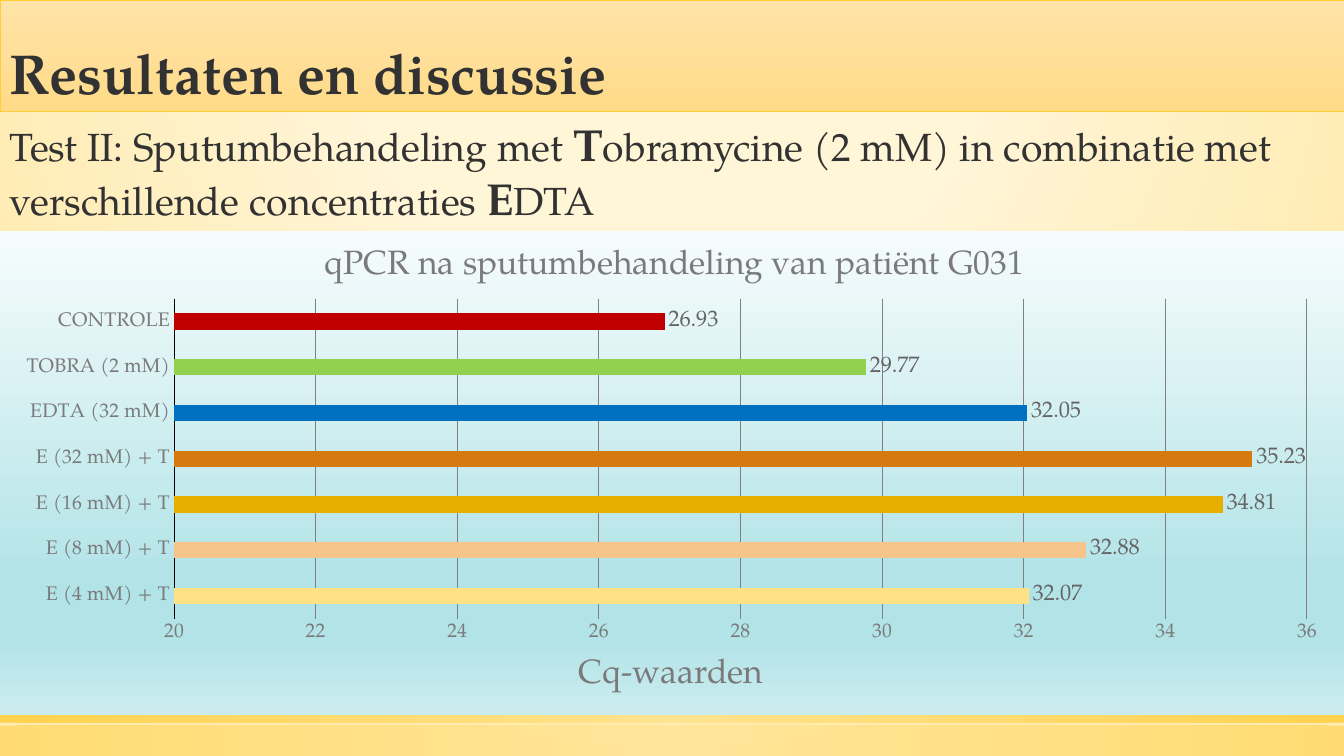
import dataclasses
import typing

import lxml.etree
import pptx
import pptx.chart.data
import pptx.dml.color
import pptx.enum.chart
import pptx.enum.shapes
import pptx.enum.text
import pptx.oxml
import pptx.oxml.ns
import pptx.util

FONT = "TeX Gyre Pagella"
WIDTH = pptx.util.Inches(13.333)
HEIGHT = pptx.util.Inches(7.5)
COLORS = {
    "ink": "323232", "grey": "7A7A7A", "label": "656565", "grid": "808080",
    "axis": "000000", "gold": "FFCD36", "pale gold": "FFE186",
    "control": "C00000", "tobramycin": "92D050", "edta": "0070C0",
    "mix 32": "D6790E", "mix 16": "E8AE00", "mix 8": "F7C58B",
}
CENTRE = (50, 50, 50, 50)


class Stop(typing.NamedTuple):
    position: int
    color: str
    opacity: int = 100


class Area(typing.NamedTuple):
    """Left, top, width and height as shares of the enclosing frame."""
    left: float
    top: float
    width: float = 0
    height: float = 0

    def on_slide(self) -> tuple[int, int, int, int]:
        return (int(self.left * WIDTH), int(self.top * HEIGHT),
                int(self.width * WIDTH), int(self.height * HEIGHT))


@dataclasses.dataclass
class Band:
    area: Area
    opacity: int


@dataclasses.dataclass
class Treatment:
    name: str
    cq: float
    color: str


BANDS = [Band(Area(0, 0.96, 1, 0.04), 50), Band(Area(0, 0.945, 1, 0.011), 80)]
TITLE_AREA = Area(0, 0, 1, 0.148)
SUBTITLE_AREA = Area(0, 0.148, 0.9585, 0.157)
CHART_AREA = Area(0, 0.3055, 1, 0.64)
PLOT_AREA = Area(0.1295, 0.14, 0.843, 0.662)
CHART_TITLE_AREA = Area(0.237, 0.02)
AXIS_TITLE_AREA = Area(0.426, 0.865)
TREATMENTS = [
    Treatment("E (4 mM) + T", 32.07, "pale gold"),
    Treatment("E (8 mM) + T", 32.88, "mix 8"),
    Treatment("E (16 mM) + T", 34.81, "mix 16"),
    Treatment("E (32 mM) + T", 35.23, "mix 32"),
    Treatment("EDTA (32 mM)", 32.05, "edta"),
    Treatment("TOBRA (2 mM)", 29.77, "tobramycin"),
    Treatment("CONTROLE", 26.93, "control"),
]
SUBTITLE = [
    ("Test II: Sputumbehandeling met ", False), ("T", True),
    ("obramycine (2 mM) in combinatie met verschillende concentraties ", False),
    ("E", True), ("DTA", False),
]


def rgb(name: str) -> pptx.dml.color.RGBColor:
    return pptx.dml.color.RGBColor.from_string(COLORS[name])


def set_font(font, size: float, color: str, bold: bool = False) -> None:
    font.name, font.size, font.bold = FONT, pptx.util.Pt(size), bold
    font.color.rgb = rgb(color)


def gradient(stops: list[Stop], focus: tuple | None = None):
    """Radial gradient around focus, or a top-to-bottom one without it."""
    stop_xml = "".join(
        f'<a:gs pos="{stop.position * 1000}"><a:srgbClr val="{stop.color}">'
        f'<a:alpha val="{stop.opacity * 1000}"/></a:srgbClr></a:gs>' for stop in stops)
    direction = '<a:lin ang="5400000" scaled="0"/>'
    if focus:
        sides = " ".join(f'{side}="{share * 1000}"' for side, share in zip("ltrb", focus))
        direction = f'<a:path path="circle"><a:fillToRect {sides}/></a:path>'
    return pptx.oxml.parse_xml(
        f'<a:gradFill {pptx.oxml.ns.nsdecls("a")} rotWithShape="1">'
        f'<a:gsLst>{stop_xml}</a:gsLst>{direction}</a:gradFill>')


def fill_gradient(fill, element, stops: list[Stop], focus: tuple | None = None) -> None:
    fill.background()
    empty = next(element.iter(pptx.oxml.ns.qn("a:noFill")))
    empty.getparent().replace(empty, gradient(stops, focus))


def add_rectangle(slide, area: Area, stops: list[Stop], focus: tuple | None = None):
    shape = slide.shapes.add_shape(
        pptx.enum.shapes.MSO_SHAPE.RECTANGLE, *area.on_slide())
    shape.shadow.inherit = False
    fill_gradient(shape.fill, shape.element, stops, focus)
    shape.line.fill.background()
    return shape


def add_title(slide) -> None:
    shape = add_rectangle(
        slide, TITLE_AREA, [Stop(0, "FFE4A8"), Stop(50, "FFDF99"), Stop(100, "FFDB87")])
    shape.line.color.rgb = rgb("gold")
    shape.line.width = pptx.util.Pt(0.5)
    shape.text_frame.text = "Resultaten en discussie"
    shape.text_frame.vertical_anchor = pptx.enum.text.MSO_ANCHOR.BOTTOM
    paragraph = shape.text_frame.paragraphs[0]
    paragraph.alignment = pptx.enum.text.PP_ALIGN.LEFT
    paragraph.line_spacing = 0.9
    set_font(paragraph.runs[0].font, 40, "ink", True)


def add_subtitle(slide) -> None:
    text_frame = slide.shapes.add_textbox(*SUBTITLE_AREA.on_slide()).text_frame
    text_frame.word_wrap = True
    for text, is_initial in SUBTITLE:
        run = text_frame.paragraphs[0].add_run()
        run.text = text
        set_font(run.font, 32 if is_initial else 28, "ink", is_initial)


def set_layout(element, area: Area, index: int) -> None:
    """Place a chart part by shares of the chart's size."""
    for layout in element.findall(pptx.oxml.ns.qn("c:layout")):
        element.remove(layout)
    target = '<c:layoutTarget val="inner"/>' if area.width else ""
    size = f'<c:w val="{area.width}"/><c:h val="{area.height}"/>' if area.width else ""
    element.insert(index, pptx.oxml.parse_xml(
        f'<c:layout {pptx.oxml.ns.nsdecls("c")}><c:manualLayout>{target}'
        f'<c:xMode val="edge"/><c:yMode val="edge"/><c:x val="{area.left}"/>'
        f'<c:y val="{area.top}"/>{size}</c:manualLayout></c:layout>'))


def set_heading(heading, text: str, area: Area) -> None:
    heading.text_frame.text = text
    set_font(heading.text_frame.paragraphs[0].runs[0].font, 24, "grey")
    set_layout(heading.element, area, 1)


def style_axes(chart) -> None:
    for axis in (chart.category_axis, chart.value_axis):
        axis.major_tick_mark = pptx.enum.chart.XL_TICK_MARK.NONE
        axis.minor_tick_mark = pptx.enum.chart.XL_TICK_MARK.NONE
        set_font(axis.tick_labels.font, 14, "grey")
    chart.category_axis.format.line.color.rgb = rgb("axis")
    chart.category_axis.format.line.width = pptx.util.Pt(0.75)
    values = chart.value_axis
    values.format.line.fill.background()
    values.minimum_scale, values.maximum_scale, values.major_unit = 20, 36, 2
    values.has_major_gridlines = True
    values.major_gridlines.format.line.color.rgb = rgb("grid")
    values.major_gridlines.format.line.width = pptx.util.Pt(0.75)
    set_heading(values.axis_title, "Cq-waarden", AXIS_TITLE_AREA)


def style_bars(plot) -> None:
    plot.gap_width = 182
    plot.vary_by_categories = False
    series = plot.series[0]
    series.format.fill.solid()
    series.format.fill.fore_color.rgb = rgb("gold")
    for index, treatment in enumerate(TREATMENTS):
        fill = series.points[index].format.fill
        fill.solid()
        fill.fore_color.rgb = rgb(treatment.color)
    labels = series.data_labels
    labels.show_value = True
    labels.number_format, labels.number_format_is_linked = "0.00", False
    labels.position = pptx.enum.chart.XL_LABEL_POSITION.OUTSIDE_END
    set_font(labels.font, 16, "label")


def add_cq_chart(slide) -> None:
    data = pptx.chart.data.CategoryChartData()
    data.categories = [treatment.name for treatment in TREATMENTS]
    data.add_series("Series 1", [treatment.cq for treatment in TREATMENTS])
    chart = slide.shapes.add_chart(
        pptx.enum.chart.XL_CHART_TYPE.BAR_CLUSTERED, *CHART_AREA.on_slide(), data).chart
    set_font(chart.font, 10, "ink")
    chart.has_legend = False
    set_heading(chart.chart_title, "qPCR na sputumbehandeling van patiënt G031",
                CHART_TITLE_AREA)
    style_axes(chart)
    style_bars(chart.plots[0])
    set_layout(next(chart.element.iter(pptx.oxml.ns.qn("c:plotArea"))), PLOT_AREA, 0)
    properties = pptx.oxml.parse_xml(
        f'<c:spPr {pptx.oxml.ns.nsdecls("c", "a")}><a:ln><a:noFill/></a:ln></c:spPr>')
    properties.insert(0, gradient([Stop(0, "F6FCFC"), Stop(74, "B1E3E7"),
                                   Stop(83, "B1E3E7"), Stop(100, "CBECEF")]))
    chart.element.find(pptx.oxml.ns.qn("c:chart")).addnext(properties)


def main() -> None:
    presentation = pptx.Presentation()
    presentation.slide_width, presentation.slide_height = WIDTH, HEIGHT
    slide = presentation.slides.add_slide(presentation.slide_layouts[6])
    fill_gradient(
        slide.background.fill, slide.element,
        [Stop(0, "FFF5D7", 59), Stop(40, "FFF5D7", 66), Stop(100, "FFEBAF")],
        (50, -80, 50, 180))
    for band in BANDS:
        add_rectangle(slide, band.area, [Stop(0, COLORS["pale gold"], band.opacity),
                                         Stop(100, COLORS["gold"], band.opacity)], CENTRE)
    add_title(slide)
    add_subtitle(slide)
    add_cq_chart(slide)
    presentation.save("out.pptx")


if __name__ == "__main__":
    main()
